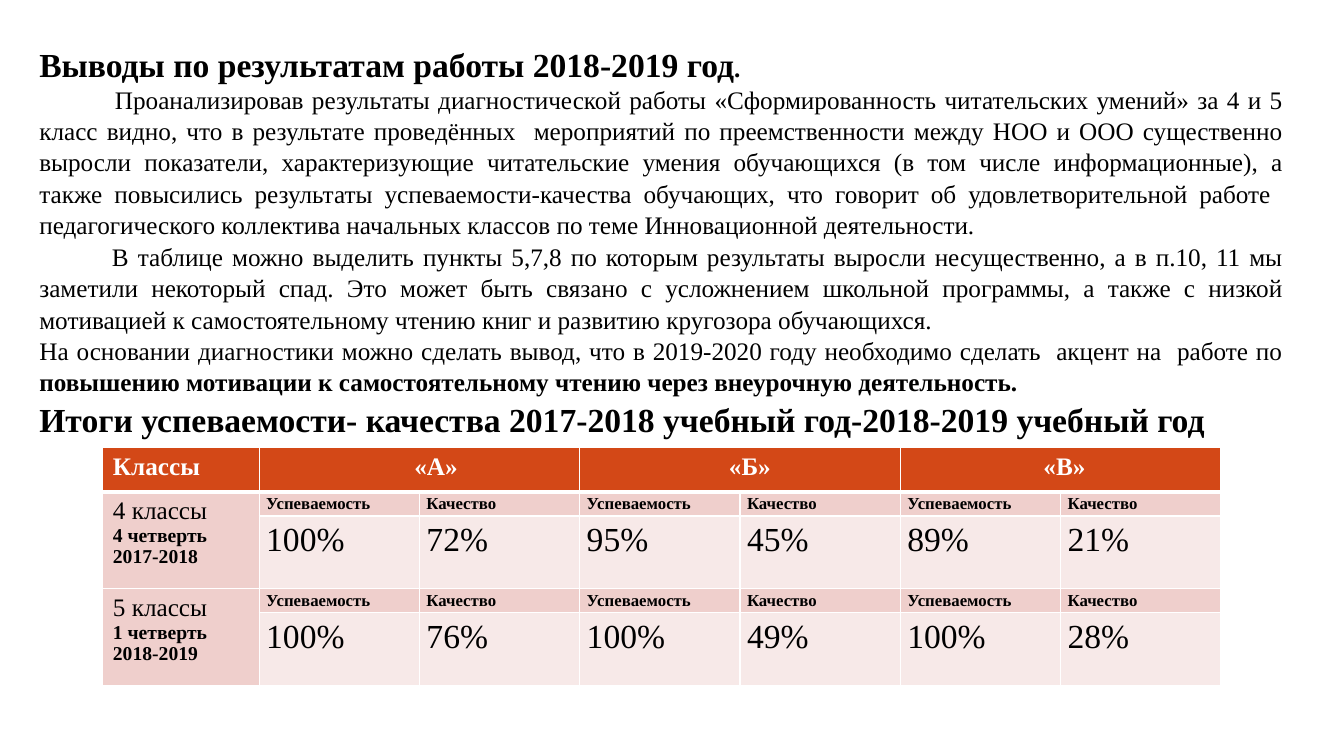
from dataclasses import dataclass

from lxml.etree import SubElement
from pptx import Presentation
from pptx.dml.color import RGBColor
from pptx.enum.text import MSO_ANCHOR, MSO_AUTO_SIZE, PP_ALIGN
from pptx.oxml import parse_xml
from pptx.oxml.ns import nsdecls, qn
from pptx.util import Inches, Pt


@dataclass(frozen=True)
class Theme:
    font: str = "Times New Roman"
    text: str = "000000"
    white: str = "FFFFFF"
    header: str = "D34817"
    label: str = "EFCFCC"
    value: str = "F7E9E8"
    large: int = 24
    body: int = 18
    period: int = 14
    small: int = 12


theme = Theme()


def add_run(p, text, size, bold=False, color=theme.text):
    r = p.add_run()
    r.text = text
    r.font.name = theme.font
    r.font.size = Pt(size)
    r.font.bold = bold
    r.font.color.rgb = RGBColor.from_string(color)


def style_cell(cell, color, top, bottom):
    cell.fill.solid()
    cell.fill.fore_color.rgb = RGBColor.from_string(color)
    tcPr = cell._tc.get_or_add_tcPr()
    widths = {"lnL": 1, "lnR": 1, "lnT": top, "lnB": bottom}
    for i, (side, width) in enumerate(widths.items()):
        tcPr.insert(i, parse_xml(
            f'<a:{side} {nsdecls("a")} w="{Pt(width)}"><a:solidFill>'
            f'<a:srgbClr val="{theme.white}"/></a:solidFill></a:{side}>'))


prs = Presentation()
prs.slide_width, prs.slide_height = Inches(13.33), Inches(7.5)
s = prs.slides.add_slide(prs.slide_layouts[1])
title, body = s.shapes.title, s.placeholders[1]

for sp, top, height, inset in ((title, 0.39, 0.43, 0.05), (body, 0.82, 3.4, 0)):
    sp.left, sp.top = Inches(0.29), Inches(top)
    sp.width, sp.height = Inches(12.54), Inches(height)
    tf = sp.text_frame
    tf.word_wrap = True
    tf.auto_size = MSO_AUTO_SIZE.NONE
    tf.vertical_anchor = MSO_ANCHOR.TOP
    tf.margin_left = tf.margin_right = Inches(0.1)
    tf.margin_top, tf.margin_bottom = Inches(inset), 0

p = title.text_frame.paragraphs[0]
p.alignment = PP_ALIGN.JUSTIFY
add_run(p, "Выводы по результатам работы 2018-2019 год", theme.large, True)
add_run(p, ".", theme.body, True)

conclusions = [
    (0.75, [("Проанализировав результаты диагностической работы «Сформированность "
             "читательских умений» за 4 и 5 класс видно, что в результате проведённых  "
             "мероприятий по преемственности между НОО и ООО существенно выросли "
             "показатели, характеризующие читательские умения обучающихся (в том числе "
             "информационные), а также повысились результаты успеваемости-качества "
             "обучающих, что говорит об удовлетворительной работе  педагогического "
             "коллектива начальных классов по теме Инновационной деятельности.",
             theme.body, False)]),
    (0.72, [("В таблице можно выделить пункты 5,7,8 по которым результаты выросли "
             "несущественно, а в п.10, 11 мы заметили некоторый спад. Это может быть "
             "связано с усложнением школьной программы, а также с низкой мотивацией к "
             "самостоятельному чтению книг и развитию кругозора обучающихся.",
             theme.body, False)]),
    (0, [("На основании диагностики можно сделать вывод, что в 2019-2020 году "
          "необходимо сделать  акцент на  работе по ", theme.body, False),
         ("повышению мотивации к самостоятельному чтению через внеурочную "
          "деятельность.", theme.body, True)]),
    (0, [("Итоги успеваемости- качества 2017-2018 учебный год-2018-2019 учебный год",
          theme.large, True)]),
]
tf = body.text_frame
for i, (indent, runs) in enumerate(conclusions):
    p = tf.add_paragraph() if i else tf.paragraphs[0]
    pPr = p._p.get_or_add_pPr()
    pPr.set("marL", "0")
    pPr.set("indent", str(Inches(indent)))
    SubElement(pPr, qn("a:buNone"))
    p.alignment = PP_ALIGN.JUSTIFY
    p.line_spacing = 1.04
    p.space_before = p.space_after = Pt(0)
    for text, size, bold in runs:
        add_run(p, text, size, bold)

row_heights = [0.44, 0.24, 0.72, 0.24, 0.72]
column_widths = [1.55] + [1.59] * 6
table = s.shapes.add_table(5, 7, Inches(1.02), Inches(4.44),
                           Inches(sum(column_widths)), Inches(sum(row_heights))).table
for row, height in zip(table.rows, row_heights):
    row.height = Inches(height)
for column, width in zip(table.columns, column_widths):
    column.width = Inches(width)

for y in range(5):
    for x in range(7):
        if y == 0:
            color = theme.header
        else:
            color = theme.label if x == 0 or y % 2 else theme.value
        style_cell(table.cell(y, x), color, 3 if y == 1 else 1, 3 if y == 0 else 1)

add_run(table.cell(0, 0).text_frame.paragraphs[0], "Классы", theme.body, True, theme.white)
for i, group in enumerate(["«А»", "«Б»", "«В»"]):
    cell = table.cell(0, 1 + 2 * i)
    cell.merge(table.cell(0, 2 + 2 * i))
    cell.margin_left = Inches(1.54 - 0.06 * i)
    add_run(cell.text_frame.paragraphs[0], group, theme.body, True, theme.white)

results = [
    ("4 классы", "4 четверть 2017-2018", ["100%", "72%", "95%", "45%", "89%", "21%"]),
    ("5 классы", "1 четверть 2018-2019", ["100%", "76%", "100%", "49%", "100%", "28%"]),
]
for i, (grade, period, values) in enumerate(results):
    y = 1 + 2 * i
    cell = table.cell(y, 0)
    cell.merge(table.cell(y + 1, 0))
    add_run(cell.text_frame.paragraphs[0], grade, theme.body)
    add_run(cell.text_frame.add_paragraph(), period, theme.period, True)
    labels = ["Успеваемость", "Качество"] * 3
    for dy, texts, size, bold in ((0, labels, theme.small, True),
                                  (1, values, theme.large, False)):
        for x, text in enumerate(texts, 1):
            cell = table.cell(y + dy, x)
            cell.margin_left = cell.margin_right = Inches(0.07)
            cell.margin_top = cell.margin_bottom = 0
            p = cell.text_frame.paragraphs[0]
            p.line_spacing = 1.15
            add_run(p, text, size, bold)

prs.save("out.pptx")
